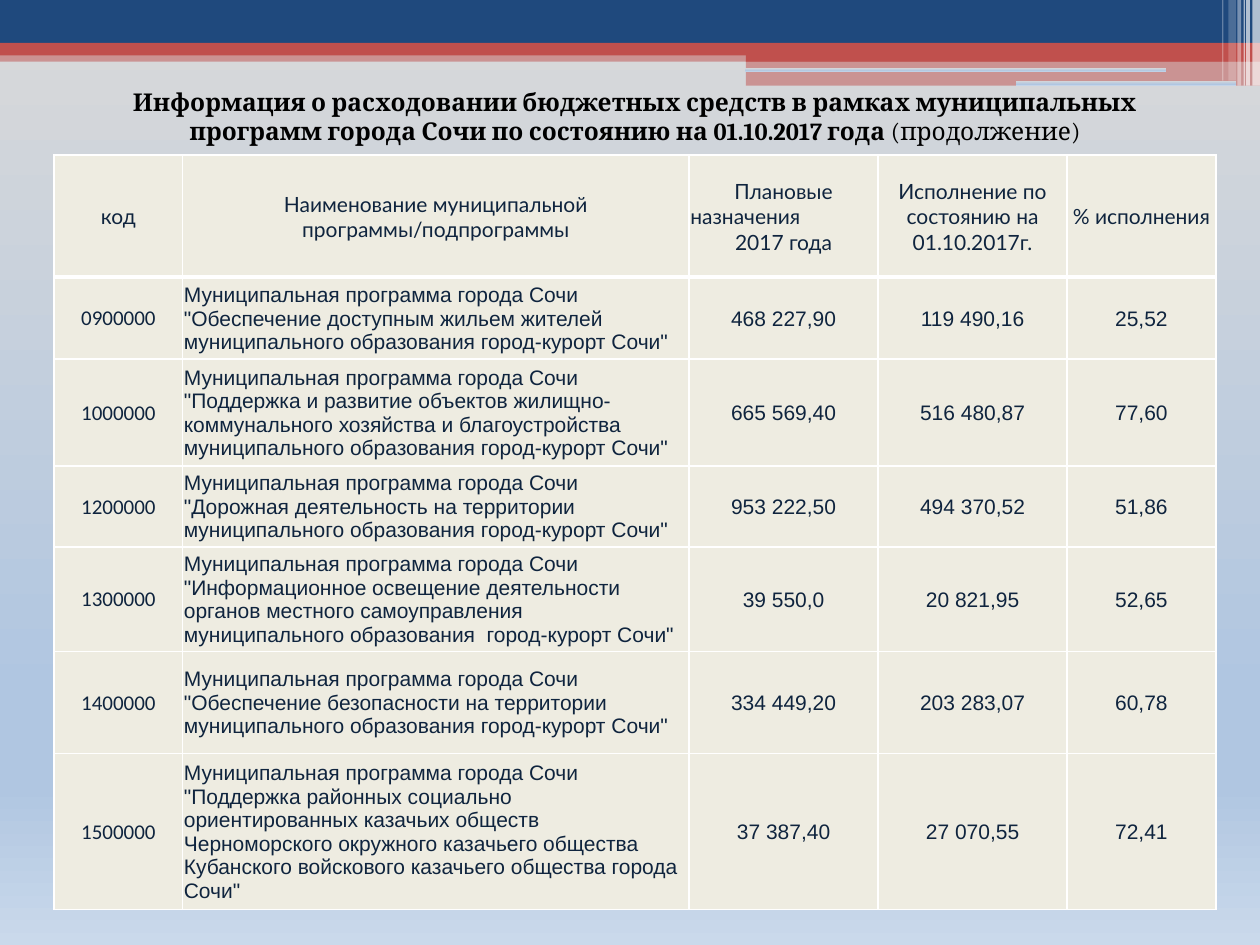
from lxml import etree
from pptx import Presentation
from pptx.dml.color import RGBColor
from pptx.enum.shapes import MSO_SHAPE
from pptx.enum.text import MSO_ANCHOR, MSO_AUTO_SIZE, PP_ALIGN
from pptx.oxml.ns import qn
from pptx.util import Inches, Pt

RECT, ROUND = MSO_SHAPE.RECTANGLE, MSO_SHAPE.ROUNDED_RECTANGLE
LEFT, CENTER = PP_ALIGN.LEFT, PP_ALIGN.CENTER
MIDDLE, TOP = MSO_ANCHOR.MIDDLE, MSO_ANCHOR.TOP
FIT_SHAPE = MSO_AUTO_SIZE.SHAPE_TO_FIT_TEXT

W, H = Inches(10), Inches(7.5)
UNIT = W // 1000  # the slide is a grid of 1000 columns by 750 rows
BLUE, RED, WHITE, BLACK = "1F497D", "C0504D", "FFFFFF", "000000"
CREAM, INK = "EEECE1", "0F243E"
SKY = [(0, "D9D9D9"), (74, "B0C6E1"), (83, "B0C6E1"), (100, "CAD9EB")]

# left, top, width, height, colour, opacity in percent
BARS = [
    (0, 40, 1000, 9, RED, 50),
    (0, 0, 1000, 34, BLUE, 100),
    (0, 34, 1000, 10, RED, 100),
    (592, 39, 408, 10, RED, 100),
    (592, 48, 408, 20, RED, 50),
]
SLOTS = [(591, 54, 335, 3), (806, 64, 175, 4)]
# left, width, height, opacity in percent
STRIPES = [(994, 6, 68, 65), (989, 3, 68, 65), (987, 1, 68, 60),
           (982, 3, 68, 40), (975, 6, 64, 20), (970, 1, 64, 30)]

TITLE = [
    ("Информация о расходовании бюджетных средств в рамках муниципальных "
     "программ города Сочи по состоянию на 01.10.2017 года ", True),
    ("(продолжение)", False),
]
COLS = [102, 402, 150, 150, 118]
ROWS = [97, 65, 85, 64, 83, 81, 124]
HEADER = [
    [("код", CENTER)],
    [("Наименование муниципальной программы/подпрограммы", CENTER)],
    [("Плановые", CENTER), ("назначения", LEFT), ("2017 года", CENTER)],
    [("Исполнение по состоянию на 01.10.2017г.", CENTER)],
    [("% исполнения", CENTER)],
]
PREFIX = "Муниципальная программа города Сочи "
PROGRAMS = [
    ("0900000", '"Обеспечение доступным жильем жителей муниципального '
     'образования город-курорт Сочи"', "468 227,90", "119 490,16", "25,52"),
    ("1000000", '"Поддержка и развитие объектов жилищно-коммунального '
     'хозяйства и благоустройства муниципального образования '
     'город-курорт Сочи"', "665 569,40", "516 480,87", "77,60"),
    ("1200000", '"Дорожная деятельность на территории муниципального '
     'образования город-курорт Сочи"', "953 222,50", "494 370,52", "51,86"),
    ("1300000", '"Информационное освещение деятельности органов местного '
     'самоуправления муниципального образования  город-курорт Сочи"',
     "39 550,0", "20 821,95", "52,65"),
    ("1400000", '"Обеспечение безопасности на территории муниципального '
     'образования город-курорт Сочи"', "334 449,20", "203 283,07", "60,78"),
    ("1500000", '"Поддержка районных социально ориентированных казачьих '
     'обществ Черноморского окружного казачьего общества Кубанского '
     'войскового казачьего общества города Сочи"',
     "37 387,40", "27 070,55", "72,41"),
]


def rgb(color):
    return RGBColor.from_string(color)


def grid(*lengths):
    return [n * UNIT for n in lengths]


def set_attrs(obj, values):
    for name, value in values.items():
        setattr(obj, name, value)


def solid(fill, color):
    fill.solid()
    fill.fore_color.rgb = rgb(color)


def add_color(parent, color):
    return etree.SubElement(parent, qn("a:srgbClr"), val=color)


def sky_fill(fill, element):
    """Fill top to bottom with the background gradient."""
    fill.gradient()
    fill.gradient_angle = 270
    stops = element.xpath(".//a:gsLst")[0]
    for stop in list(stops):
        stops.remove(stop)
    for pos, color in SKY:
        add_color(etree.SubElement(stops, qn("a:gs"), pos=str(pos * 1000)), color)


def add_bar(slide, box, kind=RECT, color=None, opacity=100):
    s = slide.shapes.add_shape(kind, *grid(*box))
    s.shadow.inherit = False
    s.line.fill.background()
    if color is None:
        sky_fill(s.fill, s._element)
        return
    solid(s.fill, color)
    if opacity < 100:
        clr = s._element.xpath("./p:spPr/a:solidFill/a:srgbClr")[0]
        etree.SubElement(clr, qn("a:alpha"), val=str(opacity * 1000))


def add_banner(slide, x, y):
    """Coloured bars, slots and the stripes in the corner."""
    for left, top, width, height, color, opacity in BARS:
        add_bar(slide, (x + left, y + top, width, height), RECT, color, opacity)
    for left, top, width, height in SLOTS:
        add_bar(slide, (x + left, y + top, width, height), ROUND)
    for left, width, height, opacity in STRIPES:
        add_bar(slide, (x + left, y, width, height), RECT, WHITE, opacity)


def add_run(p, text, font, size, color, bold=False):
    r = p.add_run()
    r.text = text
    set_attrs(r.font, {"name": font, "size": Pt(size), "bold": bold})
    r.font.color.rgb = rgb(color)


def add_title(slide, box):
    s = slide.shapes.title
    set_attrs(s, dict(zip(("left", "top", "width", "height"), grid(*box))))
    tf = s.text_frame
    set_attrs(tf, {"word_wrap": True, "vertical_anchor": TOP,
                   "auto_size": FIT_SHAPE})
    p = tf.paragraphs[0]
    p.alignment = CENTER
    for text, bold in TITLE:
        add_run(p, text, "Cambria", 14, BLACK, bold)
    slide.shapes._spTree.append(s._element)  # in front of the banner


def add_borders(cell, widths):
    tc_pr = cell._tc.get_or_add_tcPr()
    for side, width in widths.items():
        ln = etree.SubElement(tc_pr, qn(f"a:ln{side}"), w=str(Pt(width)))
        add_color(etree.SubElement(ln, qn("a:solidFill")), WHITE)


def format_cell(cell, paragraphs, font, borders):
    add_borders(cell, borders)
    solid(cell.fill, CREAM)
    set_attrs(cell, {"vertical_anchor": MIDDLE, "margin_left": UNIT,
                     "margin_top": UNIT, "margin_right": UNIT,
                     "margin_bottom": 0})
    tf = cell.text_frame
    for i, (text, align) in enumerate(paragraphs):
        p = tf.add_paragraph() if i else tf.paragraphs[0]
        p.alignment = align
        add_run(p, text, font, 12, INK)


def add_programs(slide, x, y):
    frame = slide.shapes.add_table(
        len(ROWS), len(COLS), *grid(x, y, sum(COLS), sum(ROWS)))
    table = frame.table
    set_attrs(table, {"first_row": False, "horz_banding": False})
    for col, width in zip(table.columns, COLS):
        col.width = width * UNIT
    for row, height in zip(table.rows, ROWS):
        row.height = height * UNIT

    # Header row with a thick rule below
    for c, paragraphs in enumerate(HEADER):
        format_cell(table.cell(0, c), paragraphs, "Lato",
                    {"L": 1, "R": 1, "T": 1, "B": 3})
    # One row for each program
    for r, (code, name, *values) in enumerate(PROGRAMS, 1):
        borders = {"L": 1, "R": 1, "T": 3 if r == 1 else 1, "B": 1}
        for c, text in enumerate([code, PREFIX + name, *values]):
            format_cell(table.cell(r, c), [(text, LEFT if c == 1 else CENTER)],
                        "Arial" if c else "Calibri", borders)


def main():
    prs = Presentation()
    set_attrs(prs, {"slide_width": W, "slide_height": H})
    slide = prs.slides.add_slide(prs.slide_layouts[5])
    sky_fill(slide.background.fill, slide._element)
    add_banner(slide, 0, 0)
    add_programs(slide, 43, 123)
    add_title(slide, (59, 64, 890, 57))
    prs.save("out.pptx")


if __name__ == "__main__":
    main()
